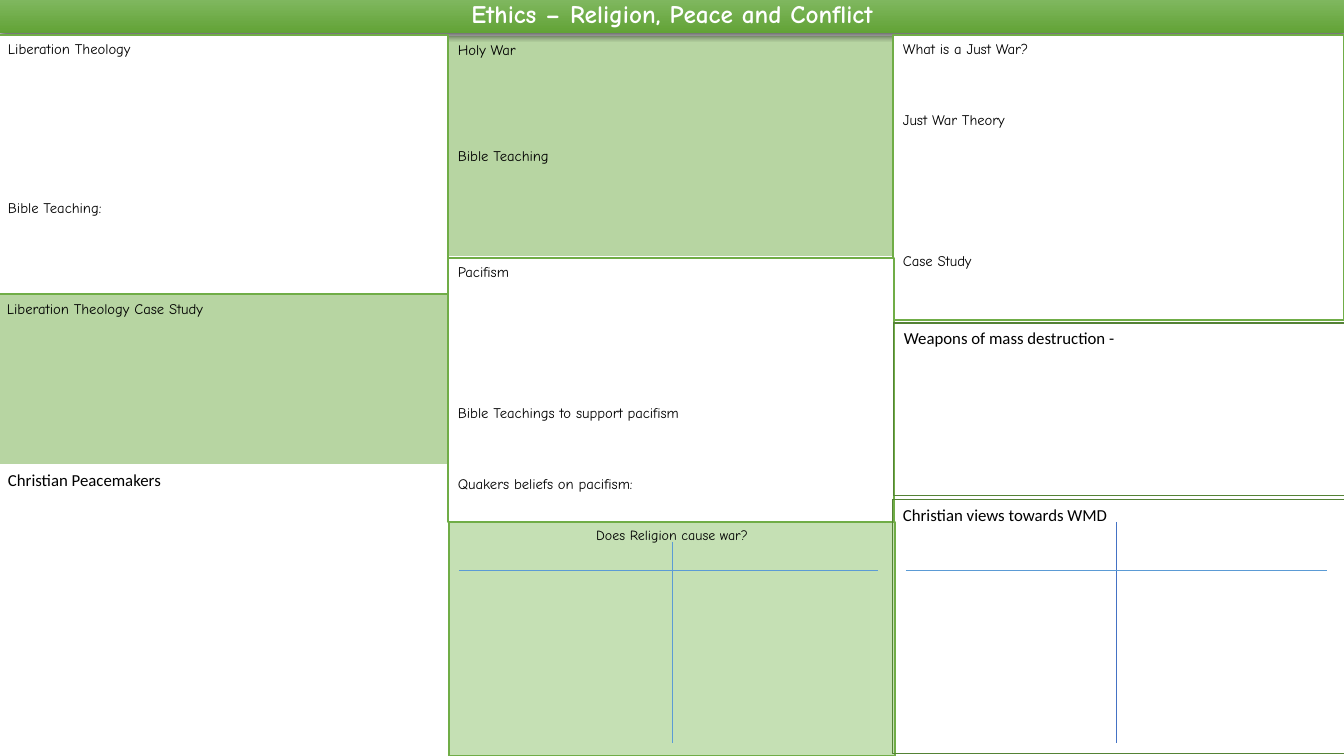
from lxml.etree import SubElement
from pptx import Presentation
from pptx.dml.color import RGBColor
from pptx.enum.shapes import MSO_CONNECTOR as CONN, MSO_SHAPE as SHAPE
from pptx.enum.text import MSO_ANCHOR as ANCHOR, PP_ALIGN as ALIGN
from pptx.oxml.ns import qn
from pptx.util import Emu, Pt

WHITE = RGBColor(0xFF, 0xFF, 0xFF)
BLACK = RGBColor(0x00, 0x00, 0x00)
GREEN = RGBColor(0x70, 0xAD, 0x47)
LIGHT_GREEN = RGBColor(0xC5, 0xE0, 0xB4)
DARK_GREEN = RGBColor(0x54, 0x82, 0x35)
TITLE_TOP = RGBColor(0x81, 0xB8, 0x61)
TITLE_BOTTOM = RGBColor(0x62, 0xA3, 0x36)
BLUE = RGBColor(0x5B, 0x9B, 0xD5)
INDIGO = RGBColor(0x44, 0x72, 0xC4)
COMIC, PLAIN = "Comic Neue", "Calibri"
ROW = 12.6


def px(n):
    """Turn whole pixels into EMU."""
    return Emu(round(n * 914400 / 100.8))


class Sheet:
    """Draws the parts of a revision sheet on one slide."""

    def __init__(self, prs):
        self.s = prs.slides.add_slide(prs.slide_layouts[6])

    def prompts(self, tf, lines, font=COMIC, size=10.5, color=BLACK, bold=False, align=ALIGN.LEFT):
        """Set (text, empty rows above) pairs as paragraphs."""
        tf.word_wrap = True
        for i, (text, rows) in enumerate(lines):
            p = tf.paragraphs[0] if i == 0 else tf.add_paragraph()
            p.text = text
            p.alignment = align
            if rows:
                p.space_before = Pt(rows * ROW)
            p.font.name, p.font.size, p.font.bold = font, Pt(size), bold
            p.font.color.rgb = color

    def box(self, at, lines, fill=None, line=None, width=1, alpha=None, **style):
        """Add a rectangle with top-anchored prompts."""
        sp = self.s.shapes.add_shape(SHAPE.RECTANGLE, *map(px, at))
        sp.shadow.inherit = False
        if fill is None:
            sp.fill.background()
        else:
            sp.fill.solid()
            sp.fill.fore_color.rgb = fill
        if alpha:
            clr = sp._element.spPr.find(qn("a:solidFill"))[0]
            SubElement(clr, qn("a:alpha"), val=str(alpha * 1000))
        if line is None:
            sp.line.fill.background()
        else:
            sp.line.color.rgb = line
            sp.line.width = Pt(width)
        sp.text_frame.vertical_anchor = ANCHOR.TOP
        self.prompts(sp.text_frame, lines, **style)
        return sp

    def title(self, at, text):
        """Add the gradient title bar with its shadow."""
        sp = self.box(at, [(text, 0)], size=18, color=WHITE, bold=True, align=ALIGN.CENTER)
        sp.fill.gradient()
        sp.fill.gradient_angle = 270
        for stop, color in zip(sp.fill.gradient_stops, (TITLE_TOP, TITLE_BOTTOM)):
            stop.color.rgb = color
        tf = sp.text_frame
        tf.vertical_anchor = ANCHOR.MIDDLE
        tf.paragraphs[0].line_spacing = 0.9
        effects = sp._element.spPr.find(qn("a:effectLst"))
        shadow = SubElement(effects, qn("a:outerShdw"), blurRad=str(Pt(4.5)),
                            dist=str(Pt(1.5)), dir="5400000", algn="ctr", rotWithShape="0")
        clr = SubElement(shadow, qn("a:srgbClr"), val=str(BLACK))
        SubElement(clr, qn("a:alpha"), val="63000")

    def label(self, at, text):
        """Add a plain text box."""
        sp = self.s.shapes.add_textbox(*map(px, at))
        self.prompts(sp.text_frame, [(text, 0)], font=PLAIN, size=12)

    def rule(self, x1, y1, x2, y2, color=BLUE):
        """Add a thin straight line."""
        c = self.s.shapes.add_connector(CONN.STRAIGHT, *map(px, (x1, y1, x2, y2)))
        c.line.color.rgb = color
        c.line.width = Pt(0.5)
        SubElement(c._element.spPr, qn("a:effectLst"))


def main():
    """Build the sheet and save it."""
    prs = Presentation()
    prs.slide_width, prs.slide_height = px(1344), px(756)
    sheet = Sheet(prs)
    tint = dict(fill=GREEN, alpha=50)
    framed = dict(fill=WHITE, line=GREEN)
    outlined = dict(line=DARK_GREEN, width=0.75, font=PLAIN, size=12)

    sheet.box((449, 522, 446, 234), [("Does Religion cause war?", 0)],
              fill=LIGHT_GREEN, line=GREEN, size=10, align=ALIGN.CENTER)
    sheet.box((448, 36, 446, 220), [("Holy War", 0), ("Bible Teaching", 5)], **tint)
    sheet.title((0, -2, 1344, 35), "Ethics – Religion, Peace and Conflict")
    sheet.box((-2, 35, 450, 259), [("Liberation Theology", 0), ("Bible Teaching:", 8)], **framed)
    sheet.box((-3, 295, 452, 169), [("Liberation Theology Case Study", 0)], **tint)
    sheet.box((893, 35, 451, 285), [("What is a Just War?", 0), ("Just War Theory", 3),
                                    ("Case Study", 7)], **framed)
    sheet.box((448, 258, 446, 264), [("Pacifism", 0), ("Bible Teachings to support pacifism", 7),
                                     ("Quakers beliefs on pacifism:", 3)], **framed)
    sheet.box((894, 323, 451, 173), [("Weapons of mass destruction -", 0)], **outlined)
    sheet.rule(672, 542, 672, 743)
    sheet.rule(459, 570, 878, 570)
    sheet.box((893, 500, 453, 254), [("Christian views towards WMD", 0)], **outlined)
    sheet.rule(1116, 522, 1116, 743, INDIGO)
    sheet.rule(906, 570, 1327, 570)
    sheet.label((-2, 465, 450, 30), "Christian Peacemakers")
    prs.save("out.pptx")


if __name__ == "__main__":
    main()
